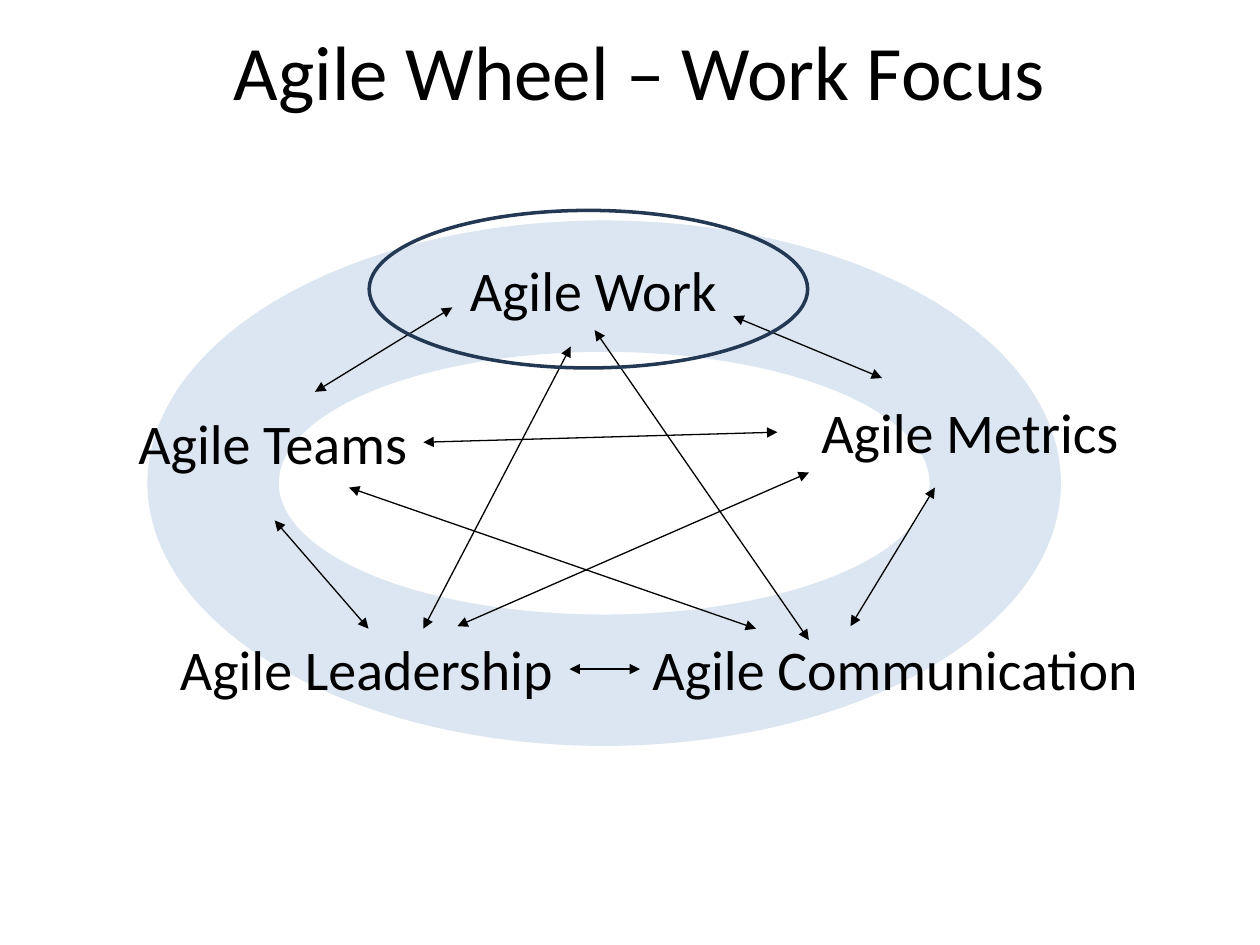
from dataclasses import dataclass

from lxml.etree import SubElement
from pptx import Presentation
from pptx.dml.color import RGBColor
from pptx.enum.shapes import MSO_CONNECTOR, MSO_SHAPE
from pptx.enum.text import MSO_ANCHOR, MSO_AUTO_SIZE, PP_ALIGN
from pptx.oxml.ns import qn
from pptx.util import Inches, Pt


@dataclass(frozen=True)
class Theme:
    font: str = "Calibri"
    ink: RGBColor = RGBColor(0x00, 0x00, 0x00)
    ring: RGBColor = RGBColor(0xDC, 0xE6, 0xF2)
    focus: RGBColor = RGBColor(0x23, 0x39, 0x53)
    title_size: Pt = Pt(44)
    label_size: Pt = Pt(32)
    arrow_width: Pt = Pt(0.75)
    focus_width: Pt = Pt(2)


THEME = Theme()
TOP, LEFT, BOTTOM, RIGHT = range(4)

# Labels: name -> left, top, width, height within the wheel
LABELS = {
    "Agile Work": (2.63, 0.31, 2.18, 0.64),
    "Agile Metrics": (5.42, 1.44, 2.58, 0.64),
    "Agile Communication": (4.08, 3.32, 4.1, 0.64),
    "Agile Teams": (0, 1.52, 2.36, 0.64),
    "Agile Leadership": (0.33, 3.32, 3.19, 0.64),
}

# Arrows: each end is a point within the wheel or a (label, side) joint
ARROWS = [
    ((3.53, 1.08), (2.36, 3.32)),
    (("Agile Work", BOTTOM), (5.42, 3.41)),
    ((4.82, 0.84), (6, 1.33)),
    ((2.59, 0.77), (1.5, 1.44)),
    ((2.63, 3.3), (5.42, 2.08)),
    ((1.77, 2.2), (5, 3.32)),
    (("Agile Leadership", RIGHT), ("Agile Communication", LEFT)),
    (("Agile Teams", RIGHT), (5.17, 1.76)),
    ((6.42, 2.2), (5.75, 3.3)),
    ((1.18, 2.46), ("Agile Leadership", TOP)),
]


def place(box, part):
    """Turn a part's place within a box into slide lengths."""
    left, top, width, height = part
    return [Inches(n) for n in (box[0] + left, box[1] + top, width, height)]


def add_text(page, bounds, text, size, frame_format, align=PP_ALIGN.LEFT):
    shape = page.shapes.add_textbox(*bounds)
    frame = shape.text_frame
    for name, value in frame_format.items():
        setattr(frame, name, value)
    para = frame.paragraphs[0]
    para.alignment = align
    span = para.add_run()
    span.text = text
    for name, value in {"name": THEME.font, "size": size}.items():
        setattr(span.font, name, value)
    span.font.color.rgb = THEME.ink
    return shape


def add_arrow(page, box, labels, ends):
    def is_joint(end):
        return end[0] in labels

    points = [(0, 0) if is_joint(end) else end for end in ends]
    coords = [Inches(box[axis] + point[axis])
              for point in points for axis in (0, 1)]
    arrow = page.shapes.add_connector(MSO_CONNECTOR.STRAIGHT, *coords)
    for end, connect in zip(ends, (arrow.begin_connect, arrow.end_connect)):
        if is_joint(end):
            connect(labels[end[0]], end[1])
    arrow.line.color.rgb = THEME.ink
    arrow.line.width = THEME.arrow_width
    # Arrowheads at both ends, no shadow
    properties = arrow.line._get_or_add_ln()
    for tag in ("a:headEnd", "a:tailEnd"):
        SubElement(properties, qn(tag), type="triangle")
    SubElement(arrow._element.spPr, qn("a:effectLst"))


def add_title(page, box):
    add_text(page, place((0, 0), box), "Agile Wheel – Work Focus",
             THEME.title_size,
             {"word_wrap": True, "vertical_anchor": MSO_ANCHOR.TOP},
             PP_ALIGN.CENTER)


def add_wheel(page, box):
    # Ring
    ring = page.shapes.add_shape(
        MSO_SHAPE.DONUT, *place(box, (0.17, 0.08, 7.25, 4.17)))
    ring.shadow.inherit = False
    ring.fill.solid()
    ring.fill.fore_color.rgb = THEME.ring
    ring.line.fill.background()

    # Labels
    label_format = {"word_wrap": False,
                    "auto_size": MSO_AUTO_SIZE.SHAPE_TO_FIT_TEXT}
    labels = {
        name: add_text(page, place(box, part), name, THEME.label_size,
                       label_format)
        for name, part in LABELS.items()
    }

    # Arrows between the labels
    for ends in ARROWS:
        add_arrow(page, box, labels, ends)

    # Outline around the focus
    focus = page.shapes.add_shape(
        MSO_SHAPE.OVAL, *place(box, (1.93, 0, 3.48, 1.25)))
    focus.shadow.inherit = False
    focus.fill.background()
    focus.line.color.rgb = THEME.focus
    focus.line.width = THEME.focus_width


def main():
    deck = Presentation()
    deck.slide_width, deck.slide_height = Inches(10), Inches(7.5)
    page = deck.slides.add_slide(deck.slide_layouts[6])
    add_title(page, (0.58, 0.14, 9, 1.25))
    add_wheel(page, (1, 1.67))
    deck.save("out.pptx")


if __name__ == "__main__":
    main()
